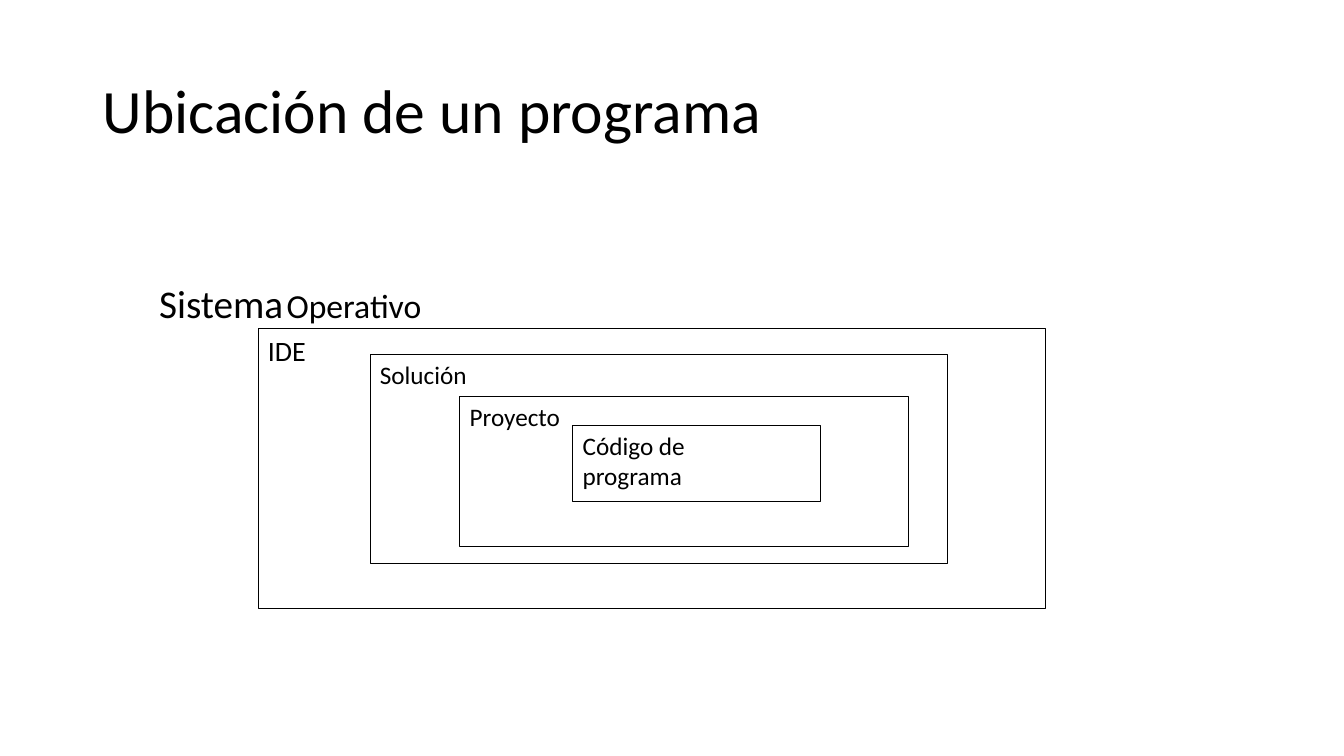
import pptx
import pptx.util
import pptx.dml.color
import pptx.enum.shapes
import pptx.enum.text

WIDTH, HEIGHT = 13.33, 7.5
FONT = "Calibri"
BLACK, WHITE = "000000", "FFFFFF"

TITLE = ("Ubicación de un programa", 44, (6.9, 5.33, 86.27, 19.33))

LAYERS = [
    ([[("Sistema", 28), (" ", 11), ("Operativo", 24)]], (11.1, 36.27, 74.12, 49.6), WHITE, 0.75),
    ([[("IDE", 20)]], (19.2, 43.47, 58.59, 37.07), BLACK, 0.5),
    ([[("Solución", 18)]], (27.53, 46.93, 42.99, 27.6), BLACK, 0.5),
    ([[("Proyecto", 18)]], (34.21, 52.4, 33.38, 19.87), BLACK, 0.5),
    ([[("Código de", 18)], [("programa", 18)]], (42.61, 56.27, 18.45, 10), BLACK, 0.5),
]


def color(value):
    return pptx.dml.color.RGBColor.from_string(value)


def place(percents):
    sides = (WIDTH, HEIGHT, WIDTH, HEIGHT)
    return [pptx.util.Inches(side * percent / 100) for side, percent in zip(sides, percents)]


def write(frame, lines, anchor):
    frame.word_wrap = True
    frame.vertical_anchor = anchor
    for index, line in enumerate(lines):
        para = frame.add_paragraph() if index else frame.paragraphs[0]
        para.alignment = pptx.enum.text.PP_ALIGN.LEFT
        for words, size in line:
            span = para.add_run()
            span.text = words
            span.font.name = FONT
            span.font.size = pptx.util.Pt(size)
            span.font.color.rgb = color(BLACK)


def add_title(page):
    words, size, area = TITLE
    box = page.shapes.add_textbox(*place(area))
    write(box.text_frame, [[(words, size)]], pptx.enum.text.MSO_ANCHOR.MIDDLE)
    box.text_frame.paragraphs[0].line_spacing = 0.9


def add_layer(page, lines, area, outline, weight):
    box = page.shapes.add_shape(pptx.enum.shapes.MSO_SHAPE.RECTANGLE, *place(area))
    box.shadow.inherit = False
    box.fill.solid()
    box.fill.fore_color.rgb = color(WHITE)
    box.line.color.rgb = color(outline)
    box.line.width = pptx.util.Pt(weight)
    write(box.text_frame, lines, pptx.enum.text.MSO_ANCHOR.TOP)


def main():
    deck = pptx.Presentation()
    deck.slide_width = pptx.util.Inches(WIDTH)
    deck.slide_height = pptx.util.Inches(HEIGHT)
    page = deck.slides.add_slide(deck.slide_layouts[6])
    page.background.fill.solid()
    page.background.fill.fore_color.rgb = color(WHITE)
    add_title(page)
    for layer in LAYERS:
        add_layer(page, *layer)
    deck.save("out.pptx")


if __name__ == "__main__":
    main()
